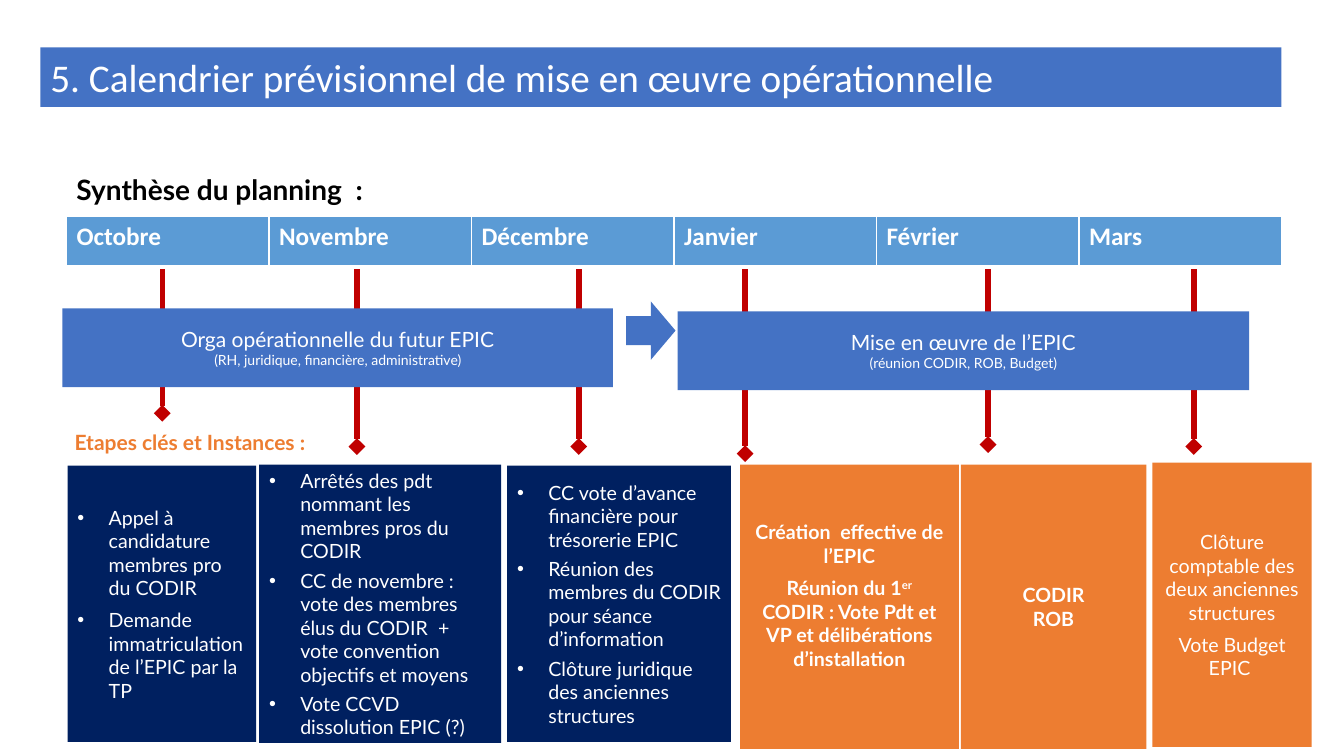
from lxml.etree import SubElement
from pptx import Presentation
from pptx.dml.color import RGBColor
from pptx.enum.shapes import MSO_CONNECTOR as Connector, MSO_SHAPE as Shape
from pptx.enum.text import MSO_ANCHOR as Anchor, MSO_AUTO_SIZE as AutoSize, PP_ALIGN as Align
from pptx.oxml.ns import qn
from pptx.util import Inches, Pt

BLUE = RGBColor(0x44, 0x72, 0xC4)
LIGHT_BLUE = RGBColor(0x5B, 0x9B, 0xD5)
NAVY = RGBColor(0x00, 0x20, 0x60)
ORANGE = RGBColor(0xED, 0x7D, 0x31)
RED = RGBColor(0xC0, 0x00, 0x00)
WHITE = RGBColor(0xFF, 0xFF, 0xFF)
BLACK = RGBColor(0x00, 0x00, 0x00)

MONTHS = ["Octobre", "Novembre", "Décembre", "Janvier", "Février", "Mars"]
MILESTONES = [  # x, top, bottom
    (1.61, 2.58, 4.1), (3.54, 2.58, 4.43), (5.74, 2.58, 4.43),
    (7.39, 2.65, 4.5), (9.8, 2.56, 4.41), (11.84, 2.58, 4.43)]
PHASES = [
    ((0.62, 3.06, 5.46, 0.78), "Orga opérationnelle du futur EPIC",
     "(RH, juridique, financière, administrative)"),
    ((6.72, 3.09, 5.67, 0.78), "Mise en œuvre de l’EPIC", "(réunion CODIR, ROB, Budget)")]
PREPARATION_CARDS = [  # box, space between items in points, items
    ((0.67, 4.62, 1.87, 2.74), 6, [
        "Appel à candidature membres pro du CODIR",
        "Demande immatriculation de l’EPIC par la TP"]),
    ((2.57, 4.61, 2.4, 2.76), 4, [
        "Arrêtés des pdt nommant les membres pros du CODIR",
        "CC de novembre : vote des membres élus du CODIR  +  vote convention objectifs et moyens",
        "Vote CCVD dissolution EPIC (?)"]),
    ((5.03, 4.62, 2.22, 2.74), 4, [
        "CC vote d’avance financière pour trésorerie EPIC",
        "Réunion des membres du CODIR pour séance d’information",
        "Clôture juridique des anciennes structures"])]
LAUNCH_CARDS = [  # box, space between items, bold, bottom margin, items
    ((7.34, 4.61, 2.17, 2.82), 6, True, 0.28, [
        "Création  effective de l’EPIC",
        ("Réunion du 1", "er", " CODIR : Vote Pdt et VP et délibérations d’installation")]),
    ((9.53, 4.61, 1.84, 2.82), 0, True, 0.05, ["CODIR", "ROB"]),
    ((11.43, 4.59, 1.58, 2.82), 6, False, 0.05, [
        "Clôture comptable des deux anciennes structures", "Vote Budget EPIC "])]


def inches(box):
    return [Inches(length) for length in box]


def format_runs(paragraph, size, color=WHITE, bold=False, name="Lato"):
    for run in paragraph.runs:
        run.font.size, run.font.name, run.font.bold = Pt(size), name, bold
        run.font.color.rgb = color


def add_block(slide, box, color, kind=Shape.RECTANGLE):
    shape = slide.shapes.add_shape(kind, *inches(box))
    shape.shadow.inherit = False
    shape.fill.solid()
    shape.fill.fore_color.rgb = color
    shape.line.fill.background()
    shape.text_frame.word_wrap = True
    shape.text_frame.vertical_anchor = Anchor.MIDDLE
    return shape


def add_title(slide, box):
    title = slide.shapes.title
    title.left, title.top, title.width, title.height = inches(box)
    title.fill.solid()
    title.fill.fore_color.rgb = BLUE
    frame = title.text_frame
    frame.text = "5. Calendrier prévisionnel de mise en œuvre opérationnelle"
    frame.auto_size = AutoSize.NONE
    frame.vertical_anchor = Anchor.MIDDLE
    frame.paragraphs[0].alignment = Align.LEFT
    format_runs(frame.paragraphs[0], 28, name="Calibri")


def add_heading(slide, box, text, size, color, alignment, anchor):
    frame = slide.shapes.add_textbox(*inches(box)).text_frame
    frame.word_wrap = True
    frame.vertical_anchor = anchor
    frame.text = text
    frame.paragraphs[0].alignment = alignment
    format_runs(frame.paragraphs[0], size, color, bold=True)


def set_borders(cell):
    """Draw white cell borders; they must precede the fill in the cell's XML."""
    properties = cell._tc.get_or_add_tcPr()
    for side, width in (("lnL", 1), ("lnR", 1), ("lnT", 1), ("lnB", 3)):
        line = SubElement(properties, qn(f"a:{side}"), w=str(Pt(width)))
        SubElement(SubElement(line, qn("a:solidFill")), qn("a:srgbClr"), val=str(WHITE))


def add_months(slide, box):
    table = slide.shapes.add_table(1, len(MONTHS), *inches(box)).table
    for cell, month in zip(table.rows[0].cells, MONTHS):
        set_borders(cell)
        cell.fill.solid()
        cell.fill.fore_color.rgb = LIGHT_BLUE
        cell.text = month
        format_runs(cell.text_frame.paragraphs[0], 18, bold=True, name="Calibri")


def add_milestone(slide, x, top, bottom):
    line = slide.shapes.add_connector(Connector.STRAIGHT, *inches((x, top, x, bottom)))
    line.line.color.rgb = RED
    line.line.width = Pt(4)
    SubElement(line.line._get_or_add_ln(), qn("a:tailEnd"), type="diamond")
    SubElement(line._element.spPr, qn("a:effectLst"))


def add_phase(slide, box, name, detail):
    frame = add_block(slide, box, BLUE).text_frame
    frame.text = f"{name}\n{detail}"
    for paragraph, size in zip(frame.paragraphs, (15, 10)):
        paragraph.alignment = Align.CENTER
        format_runs(paragraph, size)


def add_card(slide, box, color, items, gap, bold=False, bulleted=False, bottom_margin=0.05):
    """Fill a card with one paragraph per item; a tuple holds text, superscript, text."""
    frame = add_block(slide, box, color).text_frame
    frame.margin_bottom = Inches(bottom_margin)
    for index, item in enumerate(items):
        paragraph = frame.paragraphs[0] if index == 0 else frame.add_paragraph()
        paragraph.alignment = Align.LEFT if bulleted else Align.CENTER
        paragraph.space_before = Pt(gap if index else 0)
        for part, text in enumerate(item if isinstance(item, tuple) else (item,)):
            run = paragraph.add_run()
            run.text = text
            if part == 1:
                run._r.get_or_add_rPr().set("baseline", "30000")
        format_runs(paragraph, 14, bold=bold)
        if bulleted:
            properties = paragraph._p.get_or_add_pPr()
            properties.set("marL", str(Inches(0.31)))
            properties.set("indent", str(-Inches(0.31)))
            SubElement(properties, qn("a:buFont"), typeface="Arial")
            SubElement(properties, qn("a:buChar"), char="•")


def add_schedule(slide):
    for milestone in MILESTONES:
        add_milestone(slide, *milestone)
    add_heading(slide, (0.66, 1.66, 11.89, 0.44), "Synthèse du planning  :", 20, BLACK,
                Align.LEFT, Anchor.TOP)
    add_months(slide, (0.66, 2.15, 12.05, 0.5))
    for phase in PHASES:
        add_phase(slide, *phase)
    add_block(slide, (6.21, 2.99, 0.49, 0.58), BLUE, Shape.RIGHT_ARROW)


def add_key_steps(slide):
    add_heading(slide, (0.47, 4.19, 2.83, 0.4), "Etapes clés et Instances :", 15, ORANGE,
                Align.CENTER, Anchor.MIDDLE)
    for box, gap, items in PREPARATION_CARDS:
        add_card(slide, box, NAVY, items, gap, bulleted=True)
    for box, gap, bold, margin, items in LAUNCH_CARDS:
        add_card(slide, box, ORANGE, items, gap, bold=bold, bottom_margin=margin)


def main():
    presentation = Presentation()
    presentation.slide_width, presentation.slide_height = Inches(13.33), Inches(7.5)
    slide = presentation.slides.add_slide(presentation.slide_layouts[5])
    add_title(slide, (0.4, 0.47, 12.31, 0.59))
    add_schedule(slide)
    add_key_steps(slide)
    presentation.save("out.pptx")


if __name__ == "__main__":
    main()
